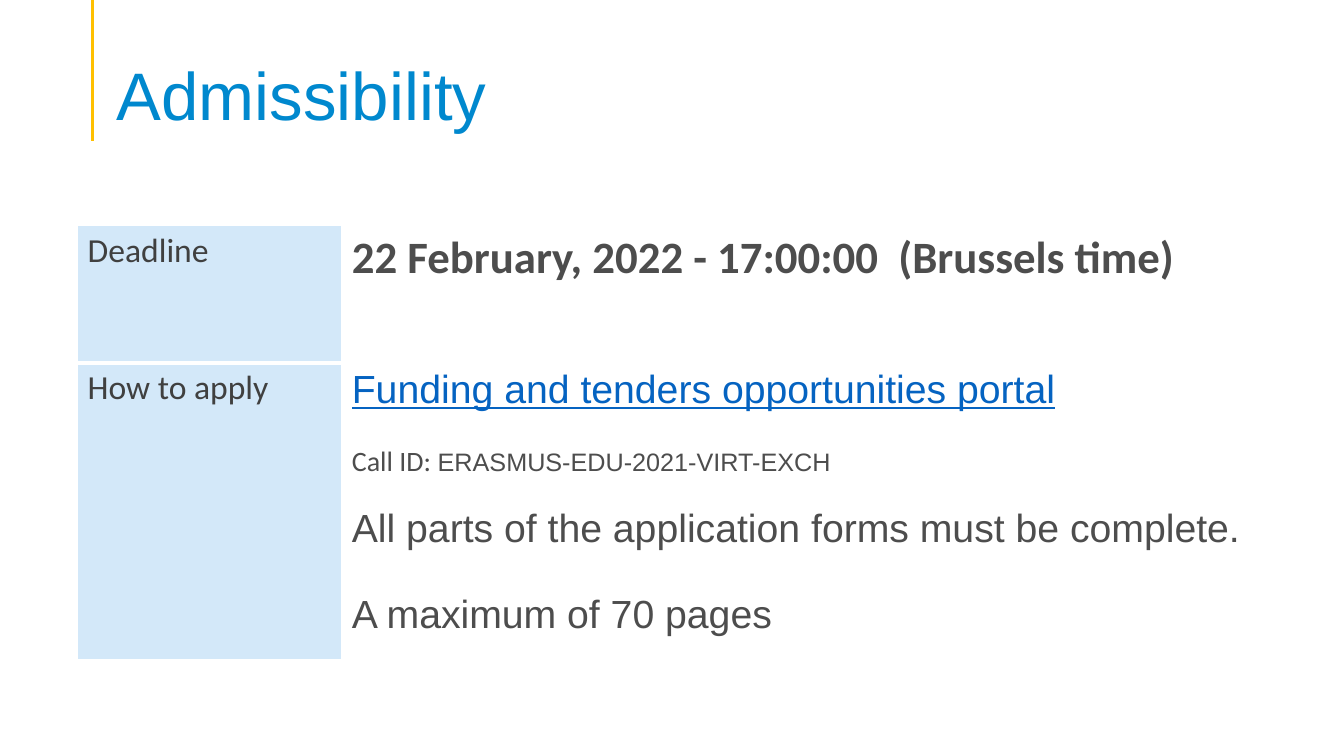
"""Build the Admissibility slide: accent line, title and a two-row table."""
from pptx import Presentation
from pptx.dml.color import RGBColor
from pptx.enum.shapes import MSO_CONNECTOR
from pptx.enum.text import MSO_ANCHOR
from pptx.oxml.ns import qn
from pptx.util import Inches, Pt
from lxml import etree

STRAIGHT = MSO_CONNECTOR.STRAIGHT
BOTTOM = MSO_ANCHOR.BOTTOM
WHITE, GREY = "FFFFFF", "4D4D4D"


def colour(value):
    return RGBColor.from_string(value)


def add_span(para, text, font_color, **formats):
    span = para.add_run()
    span.text = text
    for name, value in formats.items():
        setattr(span.font, name, value)
    span.font.color.rgb = colour(font_color)


deck = Presentation()
deck.slide_width, deck.slide_height = Inches(13.33), Inches(7.5)
page = deck.slides.add_slide(deck.slide_layouts[6])

accent = page.shapes.add_connector(STRAIGHT, Inches(0.92), 0, Inches(0.92), Inches(1.4))
accent.line.color.rgb = colour("FFC000")
accent.line.width = Pt(2.25)
etree.SubElement(accent._element.spPr, qn("a:effectLst"))

title = page.shapes.add_textbox(Inches(1.06), Inches(0.61), Inches(11.5), Inches(0.78))
frame = title.text_frame
frame.word_wrap = True
frame.vertical_anchor = BOTTOM
title_para = frame.paragraphs[0]
title_para.line_spacing = 0.9
add_span(title_para, "Admissibility", "0088CE", size=Pt(48), name="Arial")

label = {"size": Pt(24), "name": "Calibri", "bold": False}
heading = {"size": Pt(32), "name": "Calibri", "bold": True}
body = {"size": Pt(28), "name": "Arial", "bold": False}
call_label = {"size": Pt(20), "name": "Calibri", "bold": False}
call_code = {"size": Pt(18), "name": "Arial", "bold": False}

# Each cell lists paragraphs as (space before, spans).
rows = [
    [
        [(0, [("Deadline", "404040", label)])],
        [(0, [("22 February, 2022 - 17:00:00  (Brussels time)", GREY, heading)])],
    ],
    [
        [(0, [("How to apply", "404040", label)])],
        [
            (0, [("Funding and tenders opportunities portal", "0563C1", {**body, "underline": True})]),
            (24, [("Call ID: ", GREY, call_label), ("ERASMUS-EDU-2021-VIRT-EXCH", GREY, call_code)]),
            (20, [("All parts of the application forms must be complete.", GREY, body)]),
            (30, [("A maximum of 70 pages", GREY, body)]),
        ],
    ],
]
column_widths, row_heights = [2.62, 9.17], [1.36, 2.94]
fills = ["D3E8F9", WHITE]

table = page.shapes.add_table(
    2, 2, Inches(0.77), Inches(2.24), Inches(sum(column_widths)), Inches(sum(row_heights))
).table
table.first_row = table.horz_banding = False
for column, width in zip(table.columns, column_widths):
    column.width = Inches(width)
for row, height in zip(table.rows, row_heights):
    row.height = Inches(height)

for row_index, row in enumerate(rows):
    for column_index, paragraphs in enumerate(row):
        cell = table.cell(row_index, column_index)
        properties = cell._tc.get_or_add_tcPr()
        divider = "lnB" if row_index == 0 else "lnT"
        for side in ("lnL", "lnR", "lnT", "lnB"):
            width = Pt(3 if side == divider else 1)
            border = etree.SubElement(properties, qn(f"a:{side}"), w=str(width))
            paint = etree.SubElement(border, qn("a:solidFill"))
            etree.SubElement(paint, qn("a:srgbClr"), val=WHITE)
        cell.fill.solid()
        cell.fill.fore_color.rgb = colour(fills[column_index])
        for index, (gap, spans) in enumerate(paragraphs):
            para = cell.text_frame.add_paragraph() if index else cell.text_frame.paragraphs[0]
            if gap:
                para.space_before = Pt(gap)
            for text, font_color, formats in spans:
                add_span(para, text, font_color, **formats)

deck.save("out.pptx")
